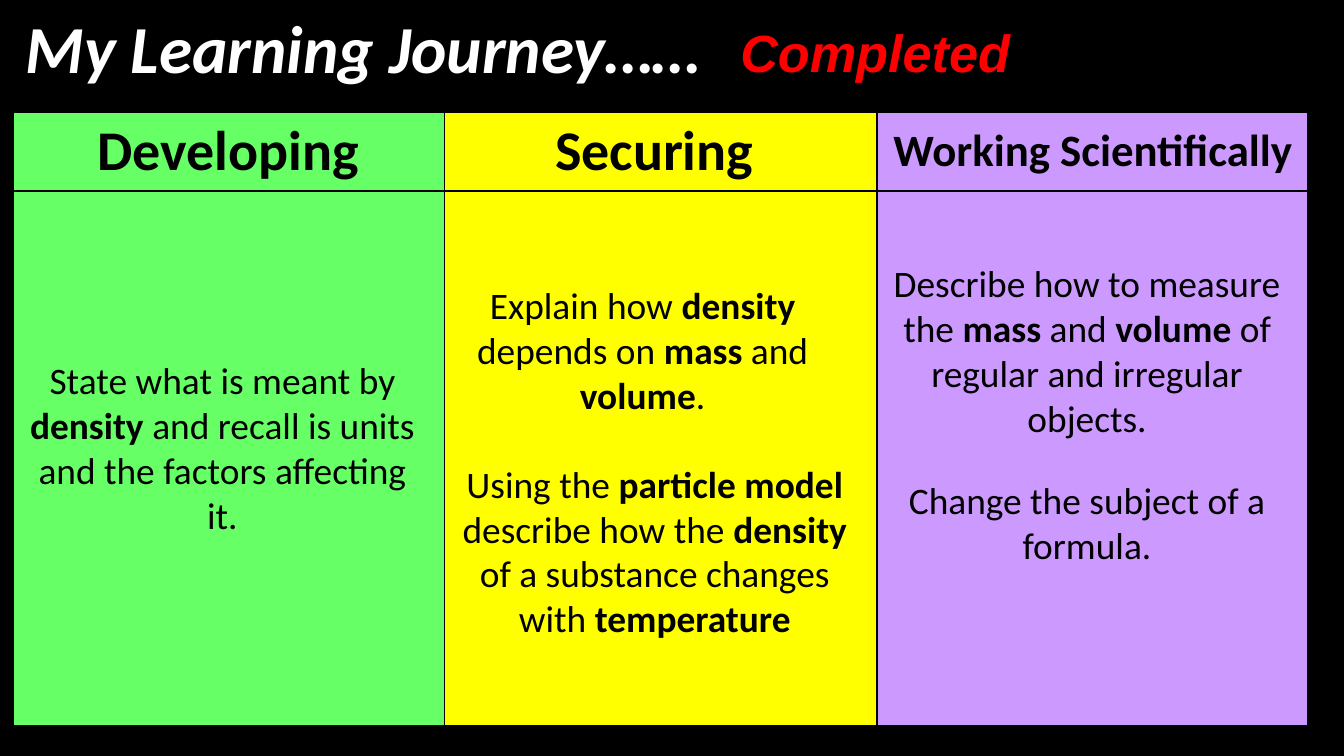
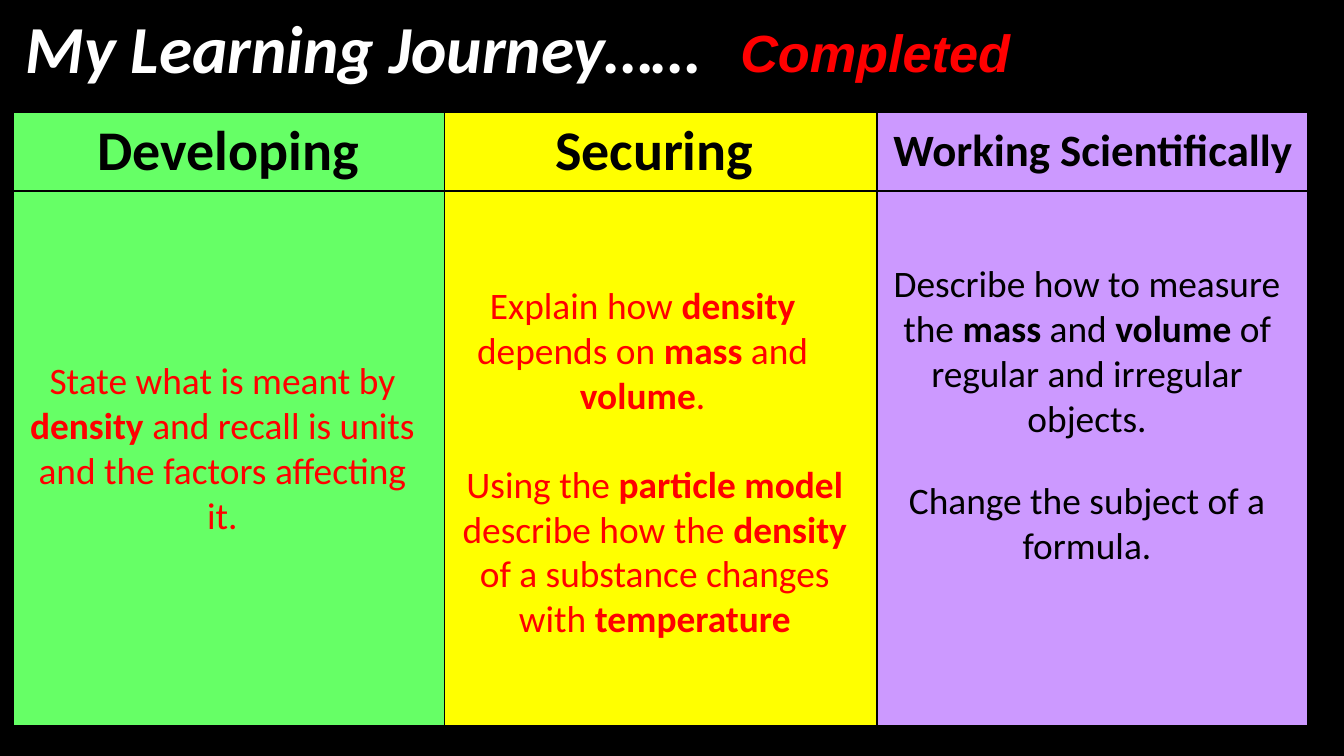
from lxml import etree
from pptx import Presentation
from pptx.dml.color import RGBColor
from pptx.enum.text import MSO_ANCHOR, MSO_AUTO_SIZE, PP_ALIGN
from pptx.oxml.ns import qn
from pptx.util import Pt

LEFT, CENTER = PP_ALIGN.LEFT, PP_ALIGN.CENTER
MIDDLE = MSO_ANCHOR.MIDDLE
GROW = MSO_AUTO_SIZE.SHAPE_TO_FIT_TEXT

HEX = {
    "black": "000000",
    "white": "FFFFFF",
    "red": "FF0000",
    "green": "66FF66",
    "yellow": "FFFF00",
    "purple": "CC99FF",
}

TITLE = {"name": "Calibri", "size": Pt(36), "bold": True, "italic": True}
STAMP = {"name": "Arial", "size": Pt(28), "bold": True, "italic": True}
HEAD = {"name": "Calibri", "bold": True}
GOAL = {"name": "Calibri", "size": Pt(20)}

# heading, heading size, fill
COLUMNS = [
    ("Developing", 30, "green"),
    ("Securing ", 30, "yellow"),
    ("Working Scientifically", 24, "purple"),
]
# column, shift from its left edge, drop from table top, lines, text with *bold* words
GOALS = [
    (0, 0, 128.2, 4,
     "State what is meant by *density *and recall is units and the factors affecting it."),
    (1, -6.5, 87.8, 3, "Explain how *density* depends on *mass* and *volume*."),
    (1, 0, 183.6, 4,
     "Using the *particle model *describe how the *density *"
     "of a substance changes with *temperature*"),
    (2, 0, 76.3, 4,
     "Describe how to measure the *mass* and *volume* of regular and irregular objects."),
    (2, 0, 192.3, 2, "Change the subject of a formula."),
]

GRID = (6.5, 59.8, 694.8, 329.7)
HEAD_H = 42.5
GOAL_W = 225.4
LINE_H = 24.4
PAD = 7.2
THICK, THIN = 2.25, 1


def rgb(key):
    return RGBColor.from_string(HEX[key])


def write(para, text, style, color, align):
    """Fill a paragraph; words between asterisks are bold."""
    para.alignment = align
    for i, part in enumerate(text.split("*")):
        if not part:
            continue
        run = para.add_run()
        run.text = part
        for key, value in style.items():
            setattr(run.font, key, value)
        if i % 2:
            run.font.bold = True
        run.font.color.rgb = rgb(color)


def label(slide, box, text, style, color, align=LEFT):
    frame = slide.shapes.add_textbox(*map(Pt, box)).text_frame
    frame.word_wrap = True
    frame.auto_size = GROW
    write(frame.paragraphs[0], text, style, color, align)


def edge(cell, widths):
    """Draw black borders, given widths for left, right, top and bottom."""
    props = cell._tc.get_or_add_tcPr()
    for i, (side, width) in enumerate(zip("LRTB", widths)):
        line = etree.Element(qn(f"a:ln{side}"), w=str(int(Pt(width))))
        fill = etree.SubElement(line, qn("a:solidFill"))
        etree.SubElement(fill, qn("a:srgbClr"), val=HEX["black"])
        props.insert(i, line)


def grid(slide, box):
    count = len(COLUMNS)
    table = slide.shapes.add_table(2, count, *map(Pt, box)).table
    table.first_row = table.horz_banding = False
    for row, height in zip(table.rows, (HEAD_H, box[3] - HEAD_H)):
        row.height = Pt(height)
    for c, (text, size, fill) in enumerate(COLUMNS):
        table.columns[c].width = Pt(box[2] / count)
        for r in range(2):
            cell = table.cell(r, c)
            cell.fill.solid()
            cell.fill.fore_color.rgb = rgb(fill)
            outer = (c == 0, c == count - 1, r == 0, r == 1)
            edge(cell, [THICK if out else THIN for out in outer])
        head = table.cell(0, c)
        head.vertical_anchor = MIDDLE
        head.margin_left = head.margin_right = Pt(5)
        head.margin_top = head.margin_bottom = Pt(2.9)
        write(head.text_frame.paragraphs[0], text,
              HEAD | {"size": Pt(size)}, "black", CENTER)


def goals(slide, box, done):
    """Place the goals over the table; those in done columns are red."""
    left, top, width, _ = box
    for col, shift, drop, lines, text in GOALS:
        place = (left + col * width / len(COLUMNS) + shift, top + drop,
                 GOAL_W, lines * LINE_H + PAD)
        label(slide, place, text, GOAL, "red" if col in done else "black", CENTER)


def journey(deck, done):
    slide = deck.slides.add_slide(deck.slide_layouts[6])
    slide.background.fill.solid()
    slide.background.fill.fore_color.rgb = rgb("black")
    label(slide, (6.5, 0, 517, 101.5), "My Learning Journey……", TITLE, "white")
    grid(slide, GRID)
    label(slide, (389.5, 7.2, 196.6, 41), "Completed", STAMP, "red")
    goals(slide, GRID, done)


def main():
    deck = Presentation()
    deck.slide_width, deck.slide_height = Pt(720), Pt(405)
    for done in ((), (0, 1)):
        journey(deck, done)
    deck.save("out.pptx")


if __name__ == "__main__":
    main()
